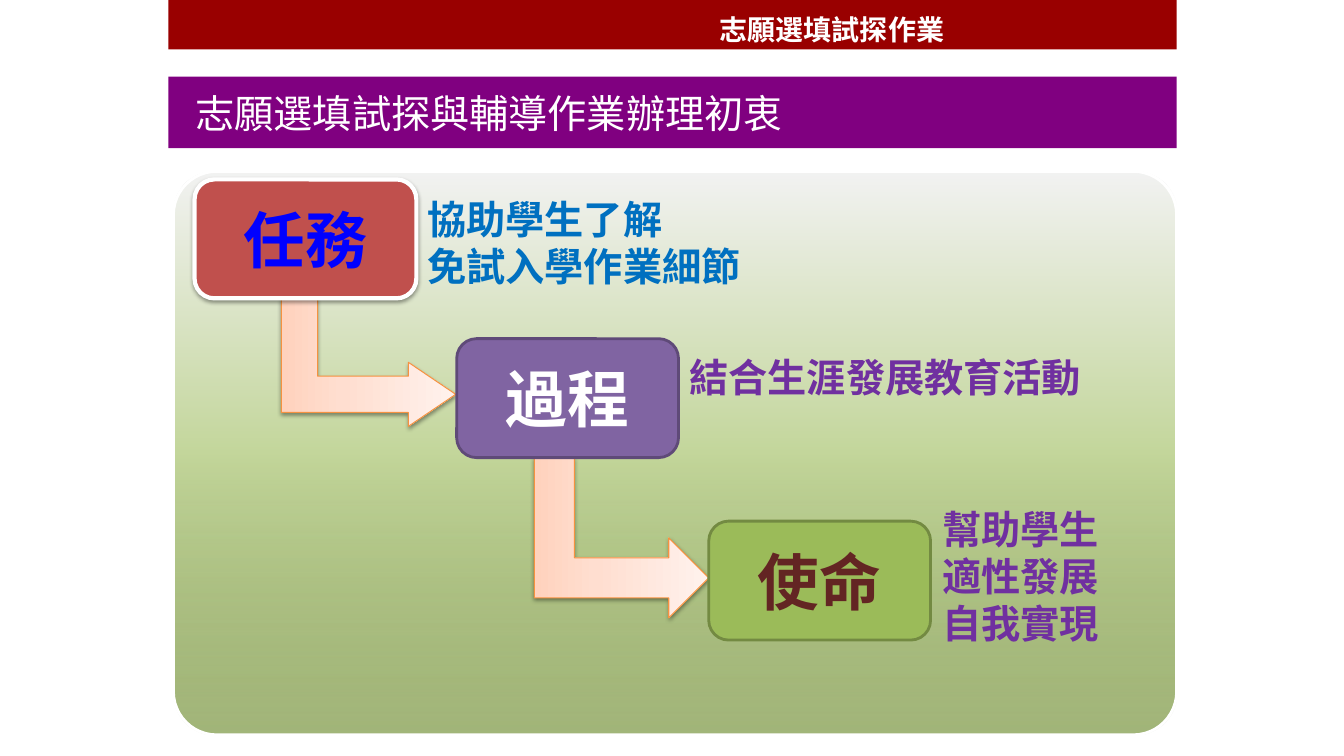
from pptx import Presentation
from pptx.dml.color import RGBColor
from pptx.enum.shapes import MSO_SHAPE
from pptx.enum.text import MSO_ANCHOR, MSO_AUTO_SIZE, PP_ALIGN
from pptx.oxml import parse_xml
from pptx.oxml.ns import qn
from pptx.util import Pt
from lxml import etree

RECT, ROUND, BENT = MSO_SHAPE.RECTANGLE, MSO_SHAPE.ROUNDED_RECTANGLE, MSO_SHAPE.BENT_UP_ARROW
CENTER, JUSTIFY = PP_ALIGN.CENTER, PP_ALIGN.JUSTIFY
MIDDLE, GROW = MSO_ANCHOR.MIDDLE, MSO_AUTO_SIZE.SHAPE_TO_FIT_TEXT
NS = 'xmlns:a="http://schemas.openxmlformats.org/drawingml/2006/main"'
PX = 9144  # 100 px to the inch

THEME = dict(
    font="Noto Sans CJK SC", white="FFFFFF", header="990000", banner="800080",
    blue="0070C0", purple="7030A0", arrow_line="F69240",
    panel=[(0, "77933C", 68), (50, "C3D69B", 100), (100, "F2F2F2", 100)],
    arrow=[(0, "FFD2BD", 100), (35, "FFDED0", 100), (100, "FFF2ED", 100)],
    small=20, body=28, step=44,
)

prs = Presentation()
prs.slide_width, prs.slide_height = 1333 * PX, 750 * PX
slide = prs.slides.add_slide(prs.slide_layouts[6])


def add_block(kind, box, fill, line=None, width=0, shadow=False):
    """Add a shape; fill is a colour or a list of (position, colour, opacity)."""
    s = slide.shapes.add_shape(kind, *[v * PX for v in box])
    s.shadow.inherit = False
    if isinstance(fill, str):
        s.fill.solid()
        s.fill.fore_color.rgb = RGBColor.from_string(fill)
    else:
        stops = "".join(
            f'<a:gs pos="{pos * 1000}"><a:srgbClr val="{color}">'
            f'<a:alpha val="{alpha * 1000}"/></a:srgbClr></a:gs>'
            for pos, color, alpha in fill)
        s._element.spPr.find(qn("a:prstGeom")).addnext(parse_xml(
            f'<a:gradFill {NS} rotWithShape="1"><a:gsLst>{stops}</a:gsLst>'
            '<a:lin ang="16200000" scaled="0"/></a:gradFill>'))
    if line:
        s.line.color.rgb = RGBColor.from_string(line)
        s.line.width = Pt(width)
    else:
        s.line.fill.background()
    if shadow:
        s._element.spPr.find(qn("a:effectLst")).append(parse_xml(
            f'<a:outerShdw {NS} blurRad="39370" dist="20320" dir="5400000" rotWithShape="0">'
            '<a:srgbClr val="000000"><a:alpha val="38000"/></a:srgbClr></a:outerShdw>'))
    return s


def add_text(text, box=None, s=None, size=28, color="FFFFFF", bold=True, align=None, indent=0):
    """Write lines of text into shape s, or into a new text box."""
    new_box = s is None
    if new_box:
        s = slide.shapes.add_textbox(*[v * PX for v in box])
    tf = s.text_frame
    tf.word_wrap = True
    if new_box:
        tf.auto_size = GROW
    else:
        tf.vertical_anchor = MIDDLE
    for i, line in enumerate(text.split("\n")):
        p = tf.add_paragraph() if i else tf.paragraphs[0]
        if align is not None:
            p.alignment = align
        if indent:
            p._p.get_or_add_pPr().set("marL", str(indent * PX))
        if new_box:
            p.line_spacing = Pt(size * 1.2)
        r = p.add_run()
        r.text = line
        r.font.size, r.font.bold, r.font.name = Pt(size), bold, THEME["font"]
        r.font.color.rgb = RGBColor.from_string(color)
        etree.SubElement(r._r.rPr, qn("a:ea")).set("typeface", THEME["font"])


# Background panel
panel = add_block(ROUND, (172, 170, 995, 559), THEME["panel"], THEME["white"], 2)
panel.adjustments[0] = 0.077

# Header strip and title banner
add_block(RECT, (167, 0, 1000, 49), THEME["header"])
add_text("志願選填試探作業", (704, 7, 443, 44), size=THEME["small"])
banner = add_block(RECT, (167, 76, 1000, 71), THEME["banner"])
add_text("志願選填試探與輔導作業辦理初衷", s=banner, size=THEME["body"], bold=False,
         align=JUSTIFY, indent=17)

# Arrows between the steps, turned to point right
ARROWS = [
    ((302, 273, 127, 173), (0.283, 0.25, 0.37)),
    ((537, 447, 159, 173), (0.25, 0.25, 0.25)),
]
for box, adjustments in ARROWS:
    arrow = add_block(BENT, box, THEME["arrow"], THEME["arrow_line"], 0.75, shadow=True)
    arrow.rotation = 90
    for i, value in enumerate(adjustments):
        arrow.adjustments[i] = value

# Steps: label, left, top, fill, line, line width, shadow, label colour, note, note box, note colour
STEPS = [
    ("任務", 193, 178, "C0504D", THEME["white"], 3, True, "0000FF",
     "協助學生了解\n免試入學作業細節", (414, 189, 347, 104), THEME["blue"]),
    ("過程", 453, 336, "8064A2", "5F4A78", 2, False, THEME["white"],
     "結合生涯發展教育活動", (674, 346, 441, 57), THEME["purple"]),
    ("使命", 703, 517, "9BBB59", "738A42", 2, False, "632523",
     "幫助學生\n適性發展\n自我實現", (925, 496, 236, 151), THEME["purple"]),
]
for label, left, top, fill, line, width, shadow, color, note, note_box, note_color in STEPS:
    s = add_block(ROUND, (left, top, 220, 118), fill, line, width, shadow)
    add_text(label, s=s, size=THEME["step"], color=color, align=CENTER)
    add_text(note, note_box, size=THEME["body"], color=note_color)

prs.save("out.pptx")
